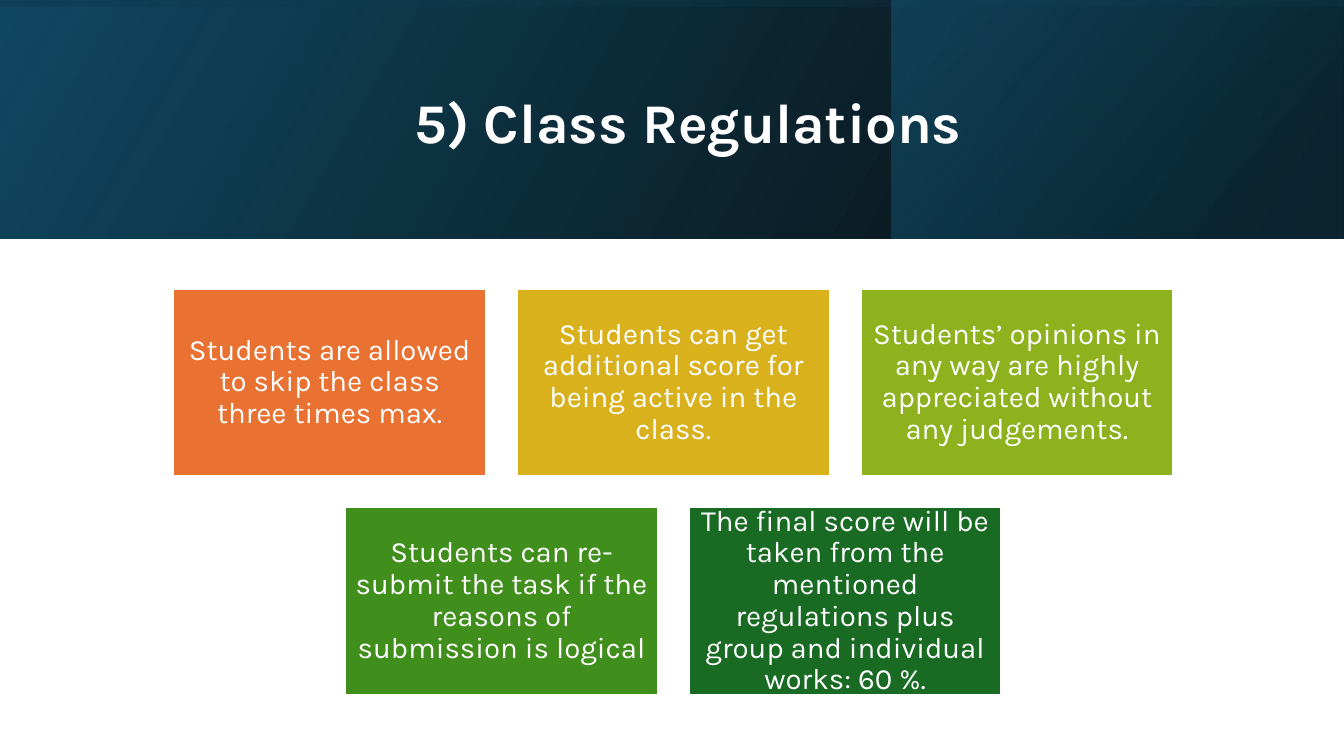
from lxml.etree import SubElement
from pptx import Presentation
from pptx.dml.color import RGBColor
from pptx.enum.shapes import MSO_SHAPE
from pptx.enum.text import MSO_ANCHOR, PP_ALIGN
from pptx.oxml.ns import qn
from pptx.util import Cm, Pt

WIDE, HIGH = 33.87, 19.05
BAND = 6.02
WHITE = "FFFFFF"
RULES = [
    [
        ("E97132", "Students are allowed to skip the class three times max."),
        ("D8B11D", "Students can get additional score for being active in the class."),
        ("8EB21E", "Students’ opinions in any way are highly appreciated without any judgements."),
    ],
    [
        ("408E1C", "Students can re-submit the task if the reasons of submission is logical"),
        ("196B24", "The final score will be taken from the mentioned regulations plus "
                   "group and individual works: 60 %."),
    ],
]


def color(code):
    return RGBColor.from_string(code)


def apply(item, values):
    for name, value in values.items():
        setattr(item, name, value)


def add_rect(slide, box):
    rect = slide.shapes.add_shape(MSO_SHAPE.RECTANGLE, *map(Cm, box))
    rect.shadow.inherit = False
    return rect


def add_fade(slide, box, stops, angle, turn=0):
    rect = add_rect(slide, box)
    rect.rotation = turn
    rect.line.fill.background()
    props = rect.element.spPr
    props.find(qn("a:xfrm")).set("flipH", "1")
    fade = props.makeelement(qn("a:gradFill"), {"rotWithShape": "1"})
    props.find(qn("a:prstGeom")).addnext(fade)
    group = SubElement(fade, qn("a:gsLst"))
    for place, code, alpha in stops:
        stop = SubElement(group, qn("a:gs"), pos=str(place * 1000))
        tint = SubElement(stop, qn("a:srgbClr"), val=code)
        SubElement(tint, qn("a:alpha"), val=str(alpha * 1000))
    SubElement(fade, qn("a:lin"), ang=str(angle * 60000), scaled="0")


def set_text(shape, text, size, inset, bold=False):
    frame = shape.text_frame
    apply(frame, {
        "word_wrap": True,
        "vertical_anchor": MSO_ANCHOR.MIDDLE,
        "margin_left": Cm(inset),
        "margin_right": Cm(inset),
        "margin_top": Cm(min(inset, 0.23)),
        "margin_bottom": Cm(min(inset, 0.23)),
    })
    para = frame.paragraphs[0]
    apply(para, {"alignment": PP_ALIGN.CENTER, "line_spacing": 0.9})
    run = para.add_run()
    run.text = text
    apply(run.font, {"name": "Karla", "size": Pt(size), "bold": bold})
    run.font.color.rgb = color(WHITE)


def add_header(slide, box):
    left, top, width, height = box
    side = 11.4
    add_fade(slide, box, [(0, "000000", 96), (100, "104862", 100)], 330)
    add_fade(slide, (left + width - side, top, side, height),
             [(19, "0B3041", 68), (100, "156082", 48)], 320)
    shift = (width - height) / 2
    add_fade(slide, (left + shift, top - shift, height, width),
             [(23, "104862", 16), (99, "000000", 45)], 350, 270)
    title = slide.shapes.add_textbox(
        Cm(left + 3.84), Cm(top + 0.97), Cm(27), Cm(4.37))
    set_text(title, "5) Class Regulations", 40, 0.25, True)


def add_cards(slide, box):
    left, top, width, height = box
    gap = 0.78
    wide = (width - 2 * gap) / 3
    high = (height - gap) / 2
    for row, cards in enumerate(RULES):
        count = len(cards)
        start = left + (width - count * wide - (count - 1) * gap) / 2
        for col, (code, text) in enumerate(cards):
            card = add_rect(slide, (start + col * (wide + gap),
                                    top + row * (high + gap), wide, high))
            card.fill.solid()
            card.fill.fore_color.rgb = color(code)
            card.line.color.rgb = color(WHITE)
            card.line.width = Pt(1.5)
            set_text(card, text, 21, 0.23)


def main():
    deck = Presentation()
    apply(deck, {"slide_width": Cm(WIDE), "slide_height": Cm(HIGH)})
    slide = deck.slides.add_slide(deck.slide_layouts[6])
    add_header(slide, (0, 0, WIDE, BAND))
    add_cards(slide, (4.37, 7.27, 25.2, 10.24))
    deck.save("out.pptx")


if __name__ == "__main__":
    main()
